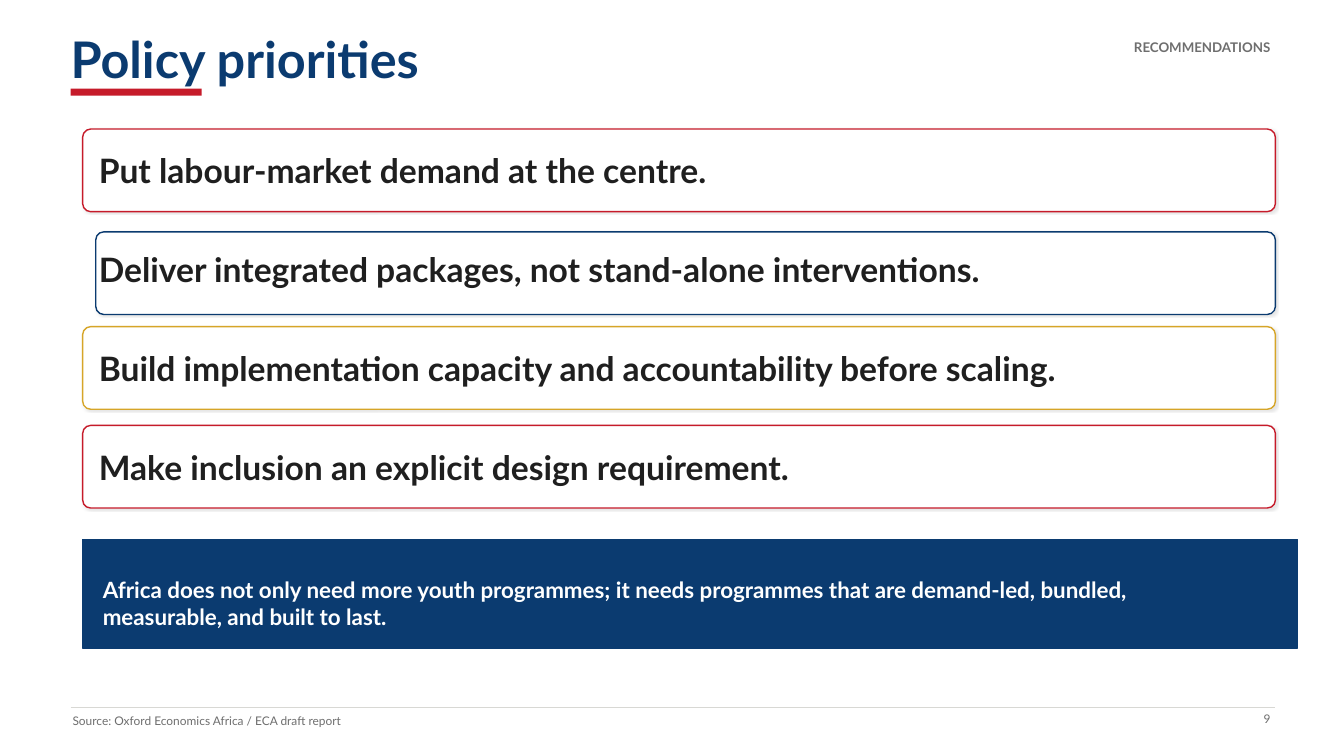
"""Build the policy priorities slide."""
from lxml.etree import SubElement
from pptx import Presentation
from pptx.dml.color import RGBColor
from pptx.enum.shapes import MSO_CONNECTOR as Link, MSO_SHAPE as Kind
from pptx.enum.text import MSO_ANCHOR as Anchor, PP_ALIGN as Align
from pptx.oxml.ns import qn
from pptx.util import Inches, Pt

WIDE, HIGH = 13.33, 7.5
NAVY, RED, GOLD = "0B3B70", "C61B2A", "D6A528"
INK, GREY, RULE, WHITE = "1F1F1F", "6E6E6E", "D8D8D4", "FFFFFF"

TITLE = "Policy priorities"
TAG = "RECOMMENDATIONS"
CARDS = [
    ("Put labour-market demand at the centre.", RED, 0, 0),
    ("Deliver integrated packages, not stand-alone interventions.", NAVY, 0.13, 0.04),
    ("Build implementation capacity and accountability before scaling.", GOLD, 0, 0),
    ("Make inclusion an explicit design requirement.", RED, 0, 0),
]
CLAIM = ("Africa does not only need more youth programmes; it needs programmes "
         "that are demand-led, bundled, measurable, and built to last.")
SOURCE = "Source: Oxford Economics Africa / ECA draft report"
PAGE = "9"

LEFT, RIGHT, EDGE = 0.7, 12.65, 12.6
INSET, TOP, STEP, TALL, PAD = 0.82, 1.28, 0.98, 0.82, 0.08
FOOT = 7.02

deck = Presentation()
deck.slide_width, deck.slide_height = Inches(WIDE), Inches(HIGH)
slide = deck.slides.add_slide(deck.slide_layouts[6])


def tint(code):
    return RGBColor.from_string(code)


def text(words, x, y, w, h, size=24, color=INK, bold=True, align=Align.LEFT):
    frame = slide.shapes.add_textbox(*map(Inches, (x, y, w, h))).text_frame
    frame.word_wrap = True
    frame.vertical_anchor = Anchor.MIDDLE
    frame.margin_left = frame.margin_right = 0
    frame.margin_top = frame.margin_bottom = 0
    para = frame.paragraphs[0]
    para.alignment = align
    run = para.add_run()
    run.text = words
    run.font.name, run.font.size, run.font.bold = "Lato", Pt(size), bold
    run.font.color.rgb = tint(color)


def block(x, y, w, h, fill, line=None, kind=Kind.RECTANGLE):
    shape = slide.shapes.add_shape(kind, *map(Inches, (x, y, w, h)))
    shape.shadow.inherit = False
    shape.fill.solid()
    shape.fill.fore_color.rgb = tint(fill)
    if line:
        shape.line.color.rgb = tint(line)
        shape.line.width = Pt(1)
    else:
        shape.line.fill.background()
    return shape


def shade(shape):
    effects = shape._element.spPr.find(qn("a:effectLst"))
    cast = SubElement(effects, qn("a:outerShdw"), blurRad=str(Pt(1)), dist=str(Pt(1)),
                      dir=str(45 * 60000), algn="tl", rotWithShape="0")
    color = SubElement(cast, qn("a:srgbClr"), val="000000")
    SubElement(color, qn("a:alpha"), val="10000")


def card(row, words, color, dx, dy):
    x, y = INSET + dx, TOP + row * STEP
    shape = block(x, y + dy, RIGHT - x, TALL, WHITE, color, Kind.ROUNDED_RECTANGLE)
    shape.adjustments[0] = 0.098
    shade(shape)
    text(words, INSET + 2 * PAD, y + PAD - dy * 1.5, RIGHT - INSET - 0.3, TALL - 2 * PAD + 3 * dy)


def rule(x, y, end):
    line = slide.shapes.add_connector(Link.STRAIGHT, *map(Inches, (x, y, end, y)))
    line.line.color.rgb = tint(RULE)
    line.line.width = Pt(1)
    SubElement(line._element.spPr, qn("a:effectLst"))


def main():
    text(TITLE, LEFT, 0.35, 8.5, 0.45, size=36, color=NAVY)
    block(LEFT, 0.88, 1.3, 0.07, RED)
    text(TAG, EDGE - 2.3, 0.37, 2.3, 0.2, size=9.5, color=GREY, align=Align.RIGHT)
    for row, item in enumerate(CARDS):
        card(row, *item)
    block(INSET, 5.35, 12.05, 1.08, NAVY, NAVY)
    text(CLAIM, INSET + 0.2, 5.82, 11.23, 0.32, size=16, color=WHITE)
    rule(LEFT, FOOT, RIGHT)
    text(SOURCE, LEFT + 0.02, FOOT + 0.03, 5.4, 0.2, size=8.5, color=GREY, bold=False)
    text(PAGE, EDGE - 0.35, FOOT + 0.01, 0.35, 0.2, size=8.5, color=GREY, bold=False,
         align=Align.RIGHT)
    deck.save("out.pptx")


if __name__ == "__main__":
    main()
